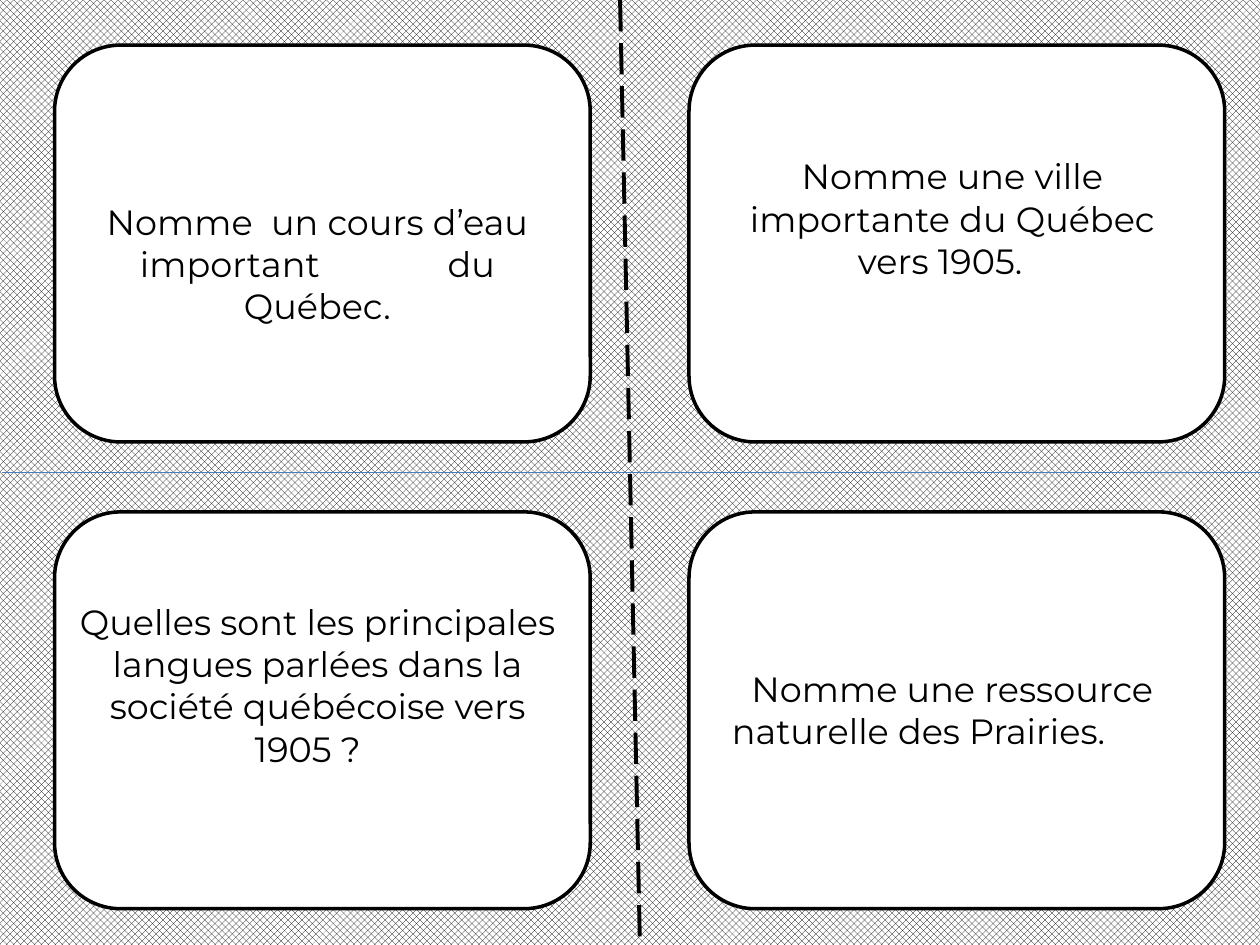
import pptx
import pptx.util
import pptx.dml.color
import pptx.enum.dml
import pptx.enum.shapes
import pptx.enum.text
import pptx.oxml.ns
from lxml import etree

Cm = pptx.util.Cm
Pt = pptx.util.Pt
SLIDE_W, SLIDE_H = 25.4, 19.05
CARD_W, CARD_H = 10.8, 8


def colour(hex_text):
    return pptx.dml.color.RGBColor.from_string(hex_text)


class QuestionSheet:
    ink = "000000"
    paper = "FFFFFF"
    font = "Montserrat"
    size = 20

    def __init__(self, slide):
        self.slide = slide

    def background(self, pattern):
        fill = self.slide.background.fill
        fill.patterned()
        fill.pattern = pattern
        fill.fore_color.rgb = colour(self.ink)
        fill.back_color.rgb = colour(self.paper)

    def line(self, x1, y1, x2, y2, hex_text, weight, dash=None):
        fold = self.slide.shapes.add_connector(
            pptx.enum.shapes.MSO_CONNECTOR.STRAIGHT, Cm(x1), Cm(y1), Cm(x2), Cm(y2))
        fold.line.color.rgb = colour(hex_text)
        fold.line.width = Pt(weight)
        if dash is not None:
            fold.line.dash_style = dash
        etree.SubElement(fold._element.spPr, pptx.oxml.ns.qn("a:effectLst"))

    def card(self, x, y):
        card = self.slide.shapes.add_shape(
            pptx.enum.shapes.MSO_SHAPE.ROUNDED_RECTANGLE, Cm(x), Cm(y), Cm(CARD_W), Cm(CARD_H))
        card.shadow.inherit = False
        card.fill.solid()
        card.fill.fore_color.rgb = colour(self.paper)
        card.line.color.rgb = colour(self.ink)
        card.line.width = Pt(2)

    def question(self, x, y, width, height, wording, tab_stop=None):
        box = self.slide.shapes.add_textbox(Cm(x), Cm(y), Cm(width), Cm(height))
        box.text_frame.word_wrap = True
        paragraph = box.text_frame.paragraphs[0]
        paragraph.add_run().text = wording
        paragraph.alignment = pptx.enum.text.PP_ALIGN.CENTER
        paragraph.font.name = self.font
        paragraph.font.size = Pt(self.size)
        paragraph.font.color.rgb = colour(self.ink)
        if tab_stop is not None:
            stops = etree.Element(pptx.oxml.ns.qn("a:tabLst"))
            etree.SubElement(stops, pptx.oxml.ns.qn("a:tab"), pos=str(Cm(tab_stop)), algn="l")
            paragraph._p.get_or_add_pPr().insert(0, stops)


def main():
    deck = pptx.Presentation()
    deck.slide_width, deck.slide_height = Cm(SLIDE_W), Cm(SLIDE_H)
    sheet = QuestionSheet(deck.slides.add_slide(deck.slide_layouts[6]))

    sheet.background(pptx.enum.dml.MSO_PATTERN.SOLID_DIAMOND)
    sheet.line(12.5, 0, 12.9, SLIDE_H, sheet.ink, 2.25, pptx.enum.dml.MSO_LINE.LONG_DASH)
    sheet.line(0.05, SLIDE_H / 2, SLIDE_W, SLIDE_H / 2, "4B7EBC", 0.75)

    for top in (0.91, 10.32):
        for left in (1.1, 13.89):
            sheet.card(left, top)

    questions = [
        (1.7, 3.91, 9.4, 2.82, "Nomme  un cours d’eau important\tdu Québec.", 6.2),
        (1.3, 11.99, 10.21, 4.52,
         "Quelles sont les principales langues parlées dans la société québécoise vers 1905 ? \t"),
        (14.5, 3, 9.4, 2.82, "Nomme une ville importante du Québec vers 1905. \t"),
        (14.5, 13.34, 9.4, 2.82, "Nomme une ressource naturelle des Prairies. \t"),
    ]
    for question in questions:
        sheet.question(*question)

    deck.save("out.pptx")


if __name__ == "__main__":
    main()
